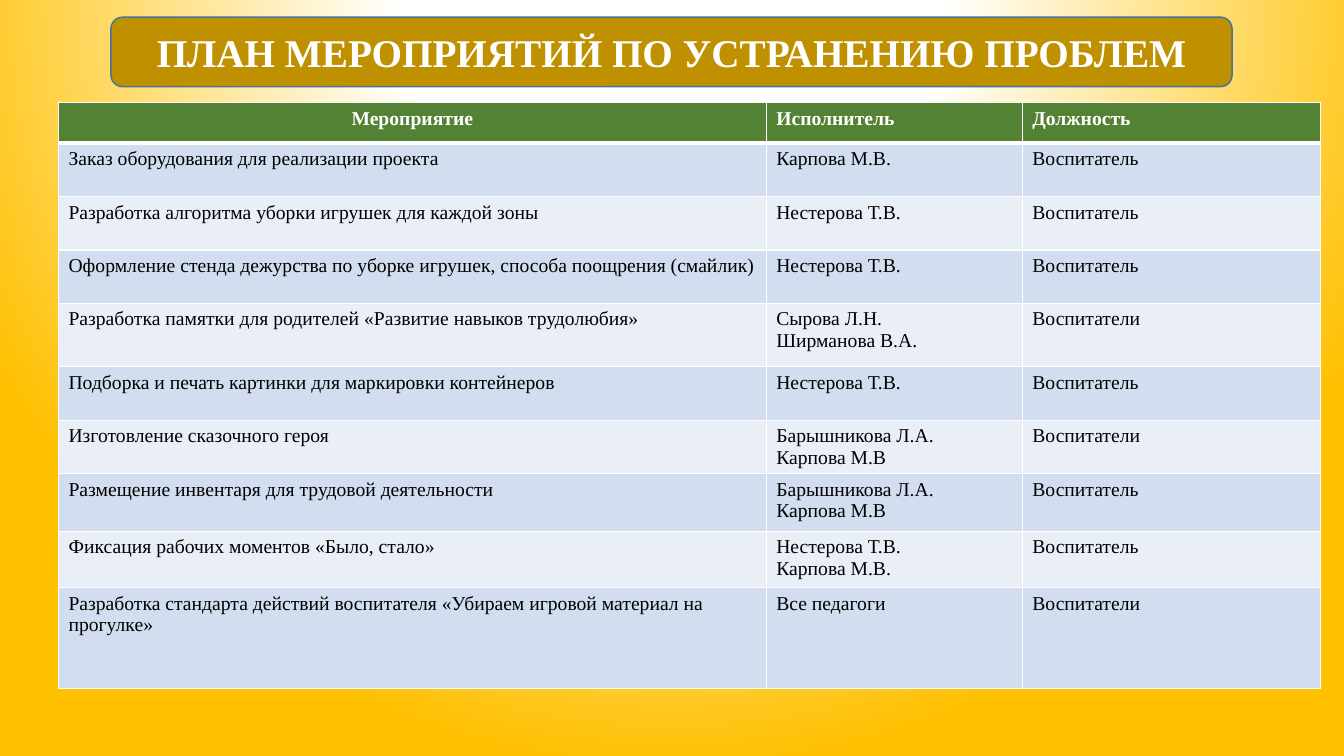
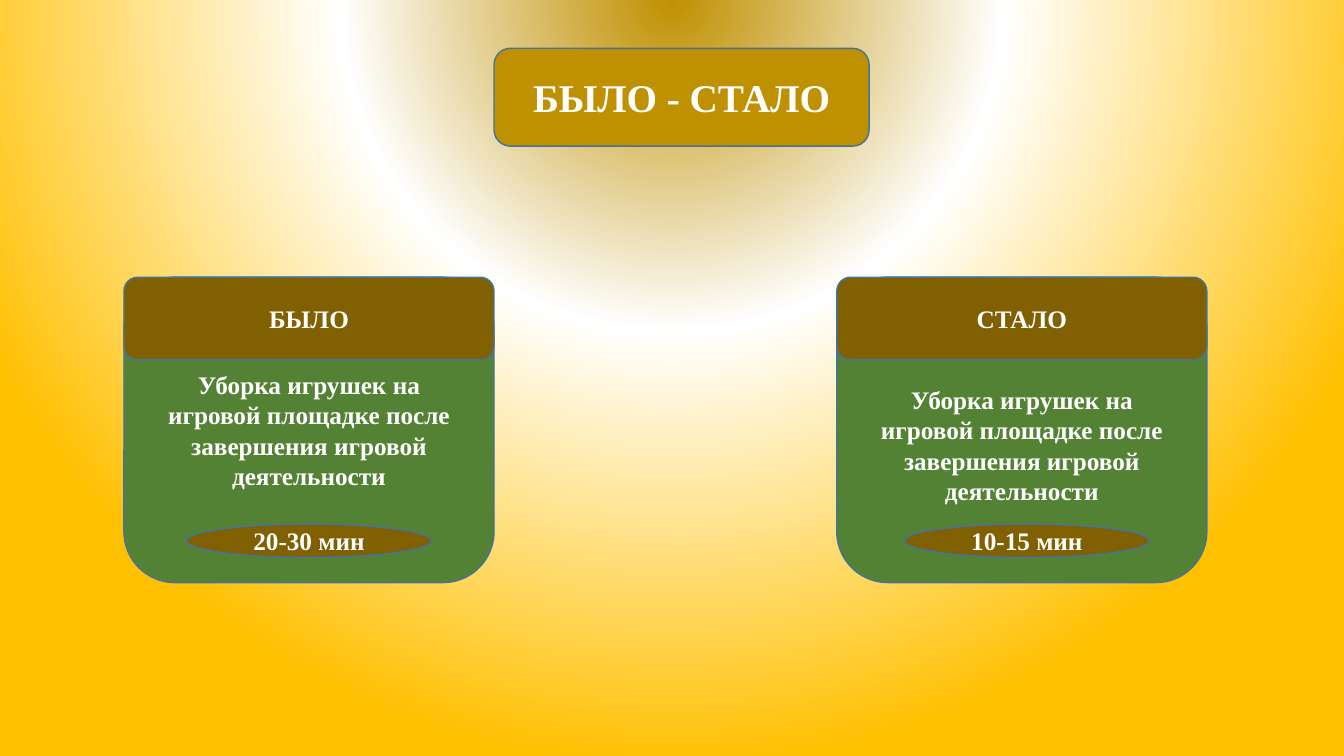
"""Builds two slides: the plan of measures and the before and after comparison."""
from lxml.etree import SubElement
from pptx import Presentation
from pptx.dml.color import RGBColor
from pptx.enum.shapes import MSO_SHAPE
from pptx.enum.text import MSO_ANCHOR, PP_ALIGN
from pptx.oxml import parse_xml
from pptx.oxml.ns import nsdecls, qn
from pptx.util import Inches, Pt

FONT = "Times New Roman"
COLORS = {
    "gold": "BF9000", "amber": "FFC000", "white": "FFFFFF", "black": "000000",
    "green": "548235", "brown": "806000", "outline": "43739E",
    "band_dark": "D2DEEF", "band_light": "EAEFF7",
}

deck = Presentation()
deck.slide_width, deck.slide_height = Inches(13.33), Inches(7.5)


def add_page(center, middle):
    page = deck.slides.add_slide(deck.slide_layouts[6])
    stops = "".join(
        f'<a:gs pos="{percent * 1000}"><a:srgbClr val="{COLORS[color]}"/></a:gs>'
        for percent, color in ((0, center), (middle, "white"), (100, "amber")))
    background = parse_xml(
        f'<p:bg {nsdecls("p", "a")}><p:bgPr><a:gradFill rotWithShape="1">'
        f'<a:gsLst>{stops}</a:gsLst><a:path path="circle">'
        '<a:fillToRect l="50000" t="-80000" r="50000" b="180000"/></a:path>'
        '</a:gradFill><a:effectLst/></p:bgPr></p:bg>')
    page.element.cSld.insert(0, background)
    return page


def add_label(page, preset, place, fill, text, size=18):
    box = page.shapes.add_shape(preset, *[Inches(length) for length in place])
    box.shadow.inherit = False
    box.fill.solid()
    box.fill.fore_color.rgb = RGBColor.from_string(COLORS[fill])
    box.line.color.rgb = RGBColor.from_string(COLORS["outline"])
    box.line.width = Pt(1)
    frame = box.text_frame
    frame.word_wrap = True
    frame.vertical_anchor = MSO_ANCHOR.MIDDLE
    para = frame.paragraphs[0]
    para.text = text
    para.alignment = PP_ALIGN.CENTER
    font = para.runs[0].font
    font.name, font.size, font.bold = FONT, Pt(size), True
    font.color.rgb = RGBColor.from_string(COLORS["white"])
    return box


plan_page = add_page("white", 35)
add_label(plan_page, MSO_SHAPE.ROUNDED_RECTANGLE, (1.1, 0.17, 11.12, 0.69), "gold",
          "ПЛАН МЕРОПРИЯТИЙ ПО УСТРАНЕНИЮ ПРОБЛЕМ", 28)

plan = [
    ("Мероприятие", "Исполнитель", "Должность"),
    ("Заказ оборудования для реализации проекта", "Карпова М.В.", "Воспитатель"),
    ("Разработка алгоритма уборки игрушек для каждой зоны", "Нестерова Т.В.", "Воспитатель"),
    ("Оформление стенда дежурства по уборке игрушек, способа поощрения (смайлик)",
     "Нестерова Т.В.", "Воспитатель"),
    ("Разработка памятки для родителей «Развитие навыков трудолюбия»",
     "Сырова Л.Н.\nШирманова В.А.", "Воспитатели"),
    ("Подборка и печать картинки для маркировки контейнеров", "Нестерова Т.В.", "Воспитатель"),
    ("Изготовление сказочного героя", "Барышникова Л.А.\nКарпова М.В", "Воспитатели"),
    ("Размещение инвентаря для трудовой деятельности",
     "Барышникова Л.А.\nКарпова М.В", "Воспитатель"),
    ("Фиксация рабочих моментов «Было, стало»",
     "Нестерова Т.В.\nКарпова М.В.", "Воспитатель"),
    ("Разработка стандарта действий воспитателя «Убираем игровой материал на прогулке»",
     "Все педагоги", "Воспитатели"),
]
widths = [7.02, 2.54, 2.96]
heights = [0.4, 0.53, 0.53, 0.53, 0.63, 0.53, 0.53, 0.57, 0.56, 1]
table = plan_page.shapes.add_table(
    len(plan), len(widths), Inches(0.58), Inches(1.02),
    Inches(sum(widths)), Inches(sum(heights))).table
table.horz_banding = False
for column, width in zip(table.columns, widths):
    column.width = Inches(width)

for row_index, (texts, height) in enumerate(zip(plan, heights)):
    table.rows[row_index].height = Inches(height)
    header = row_index == 0
    fill = "green" if header else ("band_light", "band_dark")[row_index % 2]
    for column_index, text in enumerate(texts):
        cell = table.cell(row_index, column_index)
        properties = cell._tc.get_or_add_tcPr()
        for side in ("lnL", "lnR", "lnT", "lnB"):
            thick = side == "lnB" and header or side == "lnT" and row_index == 1
            border = SubElement(properties, qn(f"a:{side}"), w=str(Pt(3 if thick else 1)))
            solid = SubElement(border, qn("a:solidFill"))
            SubElement(solid, qn("a:srgbClr"), val=COLORS["white"])
        cell.fill.solid()
        cell.fill.fore_color.rgb = RGBColor.from_string(COLORS[fill])
        cell.text_frame.text = text
        for para in cell.text_frame.paragraphs:
            if header and column_index == 0:
                para.alignment = PP_ALIGN.CENTER
            font = para.runs[0].font
            font.name, font.size, font.bold = FONT, Pt(14), header
            font.color.rgb = RGBColor.from_string(COLORS["white" if header else "black"])

result_page = add_page("gold", 43)
add_label(result_page, MSO_SHAPE.ROUNDED_RECTANGLE, (4.9, 0.48, 3.72, 0.97), "gold",
          "БЫЛО - СТАЛО", 28)

cards = [
    (1.23, 1.85, "БЫЛО", "20-30 мин", 0.05),
    (8.3, 8.97, "СТАЛО", "10-15 мин", 0.35),
]
for left, time_left, heading, time, top_margin in cards:
    card = add_label(
        result_page, MSO_SHAPE.ROUNDED_RECTANGLE, (left, 2.75, 3.67, 3.03), "green",
        "Уборка игрушек на игровой площадке после завершения игровой деятельности")
    card.text_frame.margin_top = Inches(top_margin)
    add_label(result_page, MSO_SHAPE.ROUNDED_RECTANGLE, (left, 2.75, 3.67, 0.82), "brown", heading)
    add_label(result_page, MSO_SHAPE.OVAL, (time_left, 5.2, 2.43, 0.33), "brown", time)

deck.save("out.pptx")
